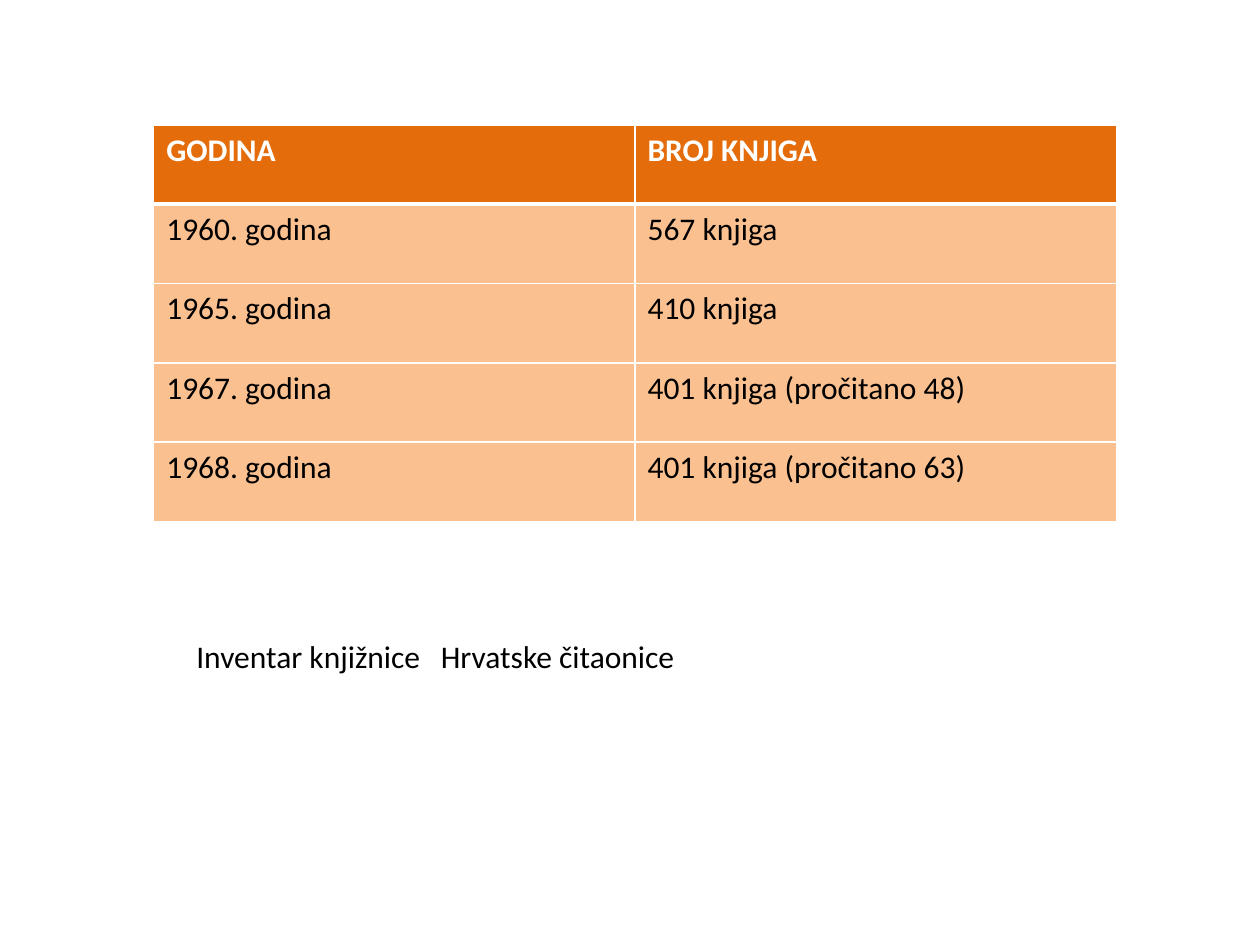
from lxml.etree import SubElement
from pptx import Presentation
from pptx.dml.color import RGBColor
from pptx.enum.text import MSO_AUTO_SIZE
from pptx.oxml.ns import qn
from pptx.util import Inches, Pt

# Content
INVENTORY = [
    ("GODINA", "BROJ KNJIGA"),
    ("1960. godina", "567 knjiga"),
    ("1965. godina", "410 knjiga"),
    ("1967. godina", "401 knjiga (pročitano 48)"),
    ("1968. godina", "401 knjiga (pročitano 63)"),
]
CAPTION = "Inventar knjižnice\tHrvatske čitaonice"

# Layout in inches
LEFT, TOP, COL_WIDTH, ROW_HEIGHT = 1.22, 0.99, 3.82, 0.63
CAPTION_BOX = (1.46, 5.01, 5.59, 0.4)
CAPTION_TAB = 1.94

WHITE, BLACK, ORANGE, PEACH = "FFFFFF", "000000", "E46C0A", "FAC090"


def rgb(value):
    return RGBColor.from_string(value)


def style(paragraph, color, bold=False):
    font = paragraph.font
    font.name, font.size, font.bold = "Calibri", Pt(18), bold
    font.color.rgb = rgb(color)


def add_borders(cell, **widths):
    """Draw white borders; widths are points keyed by side."""
    properties = cell._tc.get_or_add_tcPr()
    for side, width in widths.items():
        line = SubElement(properties, qn(f"a:ln{side}"), w=str(Pt(width)))
        SubElement(SubElement(line, qn("a:solidFill")), qn("a:srgbClr"), val=WHITE)


def add_inventory(slide):
    rows, cols = len(INVENTORY), len(INVENTORY[0])
    table = slide.shapes.add_table(
        rows, cols, Inches(LEFT), Inches(TOP),
        Inches(cols * COL_WIDTH), Inches(rows * ROW_HEIGHT)).table
    for r, entries in enumerate(INVENTORY):
        header = r == 0
        for c, entry in enumerate(entries):
            cell = table.cell(r, c)
            cell.text = entry
            style(cell.text_frame.paragraphs[0], WHITE if header else BLACK, header)
            add_borders(cell, L=1, R=1, T=3 if r == 1 else 1, B=3 if header else 1)
            cell.fill.solid()
            cell.fill.fore_color.rgb = rgb(ORANGE if header else PEACH)


def add_caption(slide):
    frame = slide.shapes.add_textbox(*map(Inches, CAPTION_BOX)).text_frame
    frame.word_wrap = True
    frame.auto_size = MSO_AUTO_SIZE.SHAPE_TO_FIT_TEXT
    frame.text = CAPTION
    paragraph = frame.paragraphs[0]
    tabs = SubElement(paragraph._p.get_or_add_pPr(), qn("a:tabLst"))
    SubElement(tabs, qn("a:tab"), pos=str(Inches(CAPTION_TAB)), algn="l")
    style(paragraph, BLACK)


def main():
    deck = Presentation()
    deck.slide_width, deck.slide_height = Inches(10), Inches(7.5)
    slide = deck.slides.add_slide(deck.slide_layouts[6])
    add_inventory(slide)
    add_caption(slide)
    deck.save("out.pptx")


if __name__ == "__main__":
    main()
